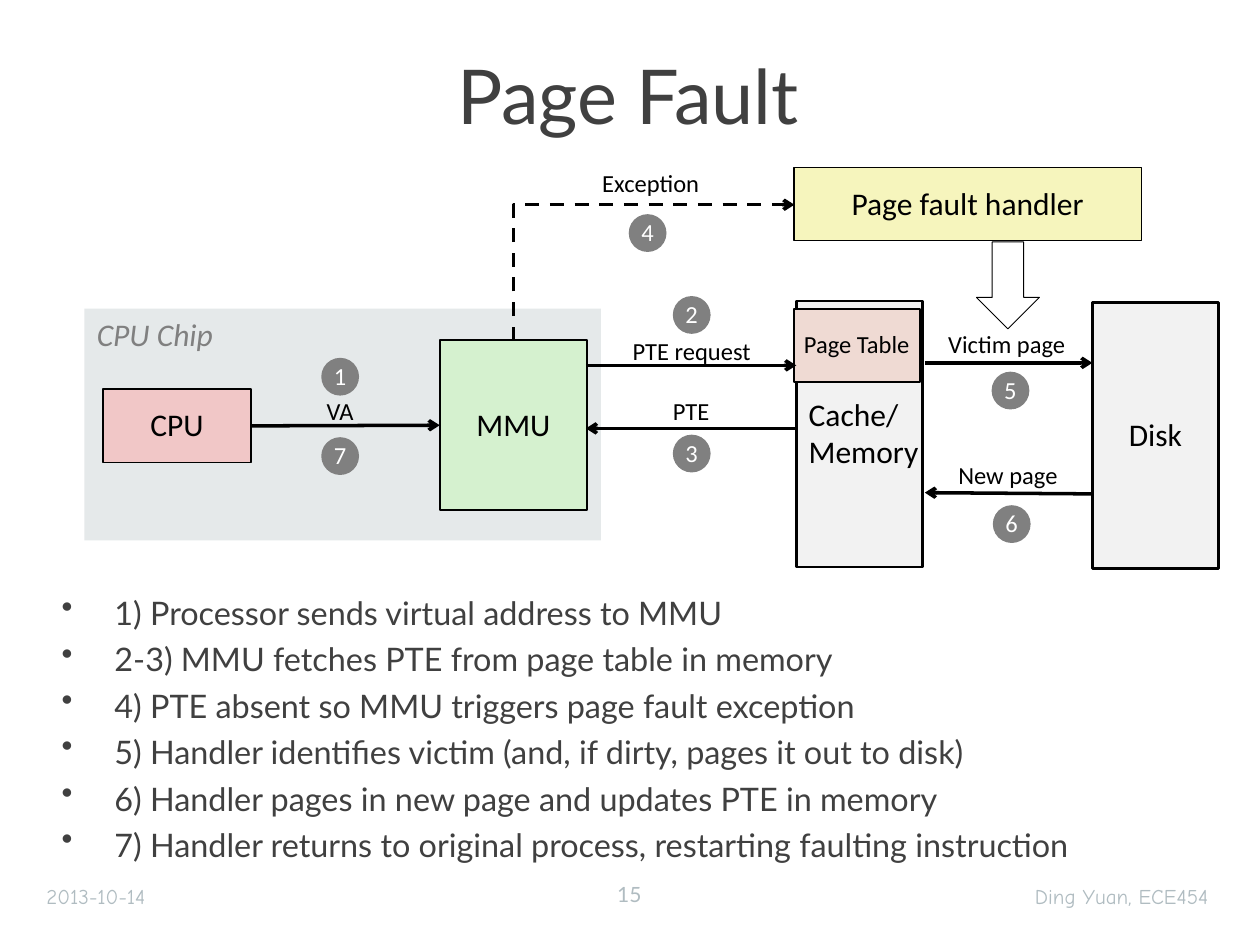
from lxml import etree
from pptx import Presentation
from pptx.dml.color import RGBColor
from pptx.enum.dml import MSO_LINE
from pptx.enum.shapes import MSO_CONNECTOR as CONN, MSO_SHAPE as SHAPE
from pptx.enum.text import MSO_ANCHOR as ANCHOR, PP_ALIGN as ALIGN
from pptx.oxml.ns import qn
from pptx.util import Inches, Pt

BLACK = RGBColor(0x00, 0x00, 0x00)
WHITE = RGBColor(0xFF, 0xFF, 0xFF)
GRAY = RGBColor(0x80, 0x80, 0x80)
DARK = RGBColor(0x40, 0x40, 0x40)
MUTED = RGBColor(0xB0, 0xBC, 0xC1)
CHIP = RGBColor(0xE5, 0xE9, 0xEA)
GREEN = RGBColor(0xD5, 0xF1, 0xCF)
LIGHT = RGBColor(0xF2, 0xF2, 0xF2)
PINK = RGBColor(0xF1, 0xC7, 0xC7)
YELLOW = RGBColor(0xF6, 0xF5, 0xBD)
PEACH = RGBColor(0xEF, 0xDA, 0xD3)

TITLE = "Page Fault"
STEPS = [
    "1) Processor sends virtual address to MMU",
    "2-3) MMU fetches PTE from page table in memory",
    "4) PTE absent so MMU triggers page fault exception",
    "5) Handler identifies victim (and, if dirty, pages it out to disk)",
    "6) Handler pages in new page and updates PTE in memory",
    "7) Handler returns to original process, restarting faulting instruction",
]
BOXES = [
    ("MMU", (3.49, 2.7, 1.17, 1.35), GREEN, 1, 18, ALIGN.CENTER),
    ("Cache/\nMemory", (6.32, 2.39, 1, 2.11), LIGHT, 1.5, 18, ALIGN.LEFT),
    ("CPU", (0.82, 3.09, 1.17, 0.58), PINK, 1, 18, ALIGN.CENTER),
    ("Disk", (8.67, 2.4, 1, 2.11), LIGHT, 1.5, 18, ALIGN.CENTER),
    ("Page fault handler", (6.3, 1.33, 2.76, 0.58), YELLOW, 1, 18, ALIGN.CENTER),
    ("Page Table", (6.3, 2.45, 1, 0.58), PEACH, 1, 14, ALIGN.CENTER),
]
ARROWS = [
    ((4.65, 2.9), (6.32, 2.9)),
    ((6.32, 3.4), (4.65, 3.4)),
    ((7.34, 2.88), (8.67, 2.88)),
    ((8.67, 3.92), (7.34, 3.91)),
]
LABELS = [
    ("VA", (2.48, 3.1, 0.44, 0.33)),
    ("PTE request", (4.89, 2.62, 1.2, 0.34)),
    ("PTE", (5.23, 3.1, 0.51, 0.34)),
    ("Victim page", (7.39, 2.57, 1.2, 0.33)),
    ("New page", (7.48, 3.61, 1.04, 0.34)),
    ("Exception", (4.65, 1.29, 1.03, 0.34)),
]
BADGE = 0.3
BADGES = [(2.55, 2.84), (5.34, 2.35), (5.34, 3.45), (4.99, 1.7),
          (7.87, 2.95), (7.88, 4.01), (2.55, 3.47)]
FOOTERS = [
    ("2013-10-14", (0.27, 6.97, 2.33, 0.28), "Comic Neue", ALIGN.LEFT),
    ("Ding Yuan, ECE454", (6.52, 6.97, 3.17, 0.28), "Comic Neue", ALIGN.RIGHT),
    ("15", (4.58, 6.95, 0.83, 0.3), "Lato", ALIGN.CENTER),
]

prs = Presentation()
prs.slide_width, prs.slide_height = Inches(10), Inches(7.5)
slide = prs.slides.add_slide(prs.slide_layouts[5])
shapes = slide.shapes


def inches(values):
    return [Inches(v) for v in values]


def write(sp, text, size, color=BLACK, font="Calibri", align=ALIGN.CENTER,
          anchor=ANCHOR.MIDDLE, wrap=False, spacing=0.98):
    tf = sp.text_frame
    tf.text = text
    tf.word_wrap = wrap
    tf.vertical_anchor = anchor
    for p in tf.paragraphs:
        p.alignment = align
        p.line_spacing = spacing
        for r in p.runs:
            r.font.name, r.font.size = font, Pt(size)
            r.font.color.rgb = color
    return tf


def add_text(at, text, size, **style):
    return write(shapes.add_textbox(*inches(at)), text, size, **style)


def add_filled(kind, at, fill, line_width=0):
    sp = shapes.add_shape(kind, *inches(at))
    sp.shadow.inherit = False
    sp.fill.solid()
    sp.fill.fore_color.rgb = fill
    if line_width:
        sp.line.color.rgb = BLACK
        sp.line.width = Pt(line_width)
    else:
        sp.line.fill.background()
    return sp


def add_arrow(start, end, kind=CONN.STRAIGHT, dash=None):
    cn = shapes.add_connector(kind, *inches(start + end))
    cn.line.color.rgb = BLACK
    cn.line.width = Pt(2)
    if dash:
        cn.line.dash_style = dash
    sp_pr = cn._element.spPr
    etree.SubElement(sp_pr.find(qn("a:ln")), qn("a:tailEnd"), type="arrow")
    etree.SubElement(sp_pr, qn("a:effectLst"))
    return cn


title = shapes.title
title.left, title.top, title.width, title.height = inches((0.22, 0.32, 9.53, 0.86))
write(title, TITLE, 43.2, color=DARK, font="Lato", wrap=True, spacing=1)

add_filled(SHAPE.RECTANGLE, (0.67, 2.45, 4.1, 1.84), CHIP)
chip = add_text((0.67, 2.45, 1.15, 0.3), "CPU Chip", 18, color=GRAY,
                align=ALIGN.LEFT, anchor=ANCHOR.TOP, spacing=1)
chip.paragraphs[0].runs[0].font.italic = True

boxes = {}
for text, at, fill, line_width, size, align in BOXES:
    boxes[text] = add_filled(SHAPE.RECTANGLE, at, fill, line_width)
    write(boxes[text], text, size, align=align)

for start, end in ARROWS:
    add_arrow(start, end)
address = add_arrow((1.99, 3.38), (3.49, 3.38))
address.begin_connect(boxes["CPU"], 3)
address.end_connect(boxes["MMU"], 1)

exception = add_arrow((5.73, 3.28), (4.65, 1.05), CONN.ELBOW, MSO_LINE.DASH)
exception._element.spPr.find(qn("a:prstGeom")).set("prst", "bentConnector2")
exception._element.spPr.find(qn("a:xfrm")).set("rot", str(90 * 60000))

add_filled(SHAPE.DOWN_ARROW, (7.75, 1.92, 0.5, 0.69), WHITE, 0.5)

for text, at in LABELS:
    add_text(at, text, 14)
for number, (left, top) in enumerate(BADGES, 1):
    badge = add_filled(SHAPE.OVAL, (left, top, BADGE, BADGE), GRAY)
    write(badge, str(number), 14, color=WHITE)

steps = add_text((0.39, 4.76, 8.75, 2.25), "\n".join(STEPS), 18.5, color=DARK,
                 font="Lato", align=ALIGN.LEFT, anchor=ANCHOR.TOP, wrap=True,
                 spacing=0.63)
for i, p in enumerate(steps.paragraphs):
    p.space_before = Pt(12.5 if i else 0)
    p_pr = p._p.get_or_add_pPr()
    p_pr.set("marL", str(Inches(0.42)))
    p_pr.set("indent", str(-Inches(0.42)))
    etree.SubElement(p_pr, qn("a:buChar"), char="•")

for text, at, font, align in FOOTERS:
    add_text(at, text, 12, color=MUTED, font=font, align=align, wrap=True, spacing=1)

prs.save("out.pptx")
